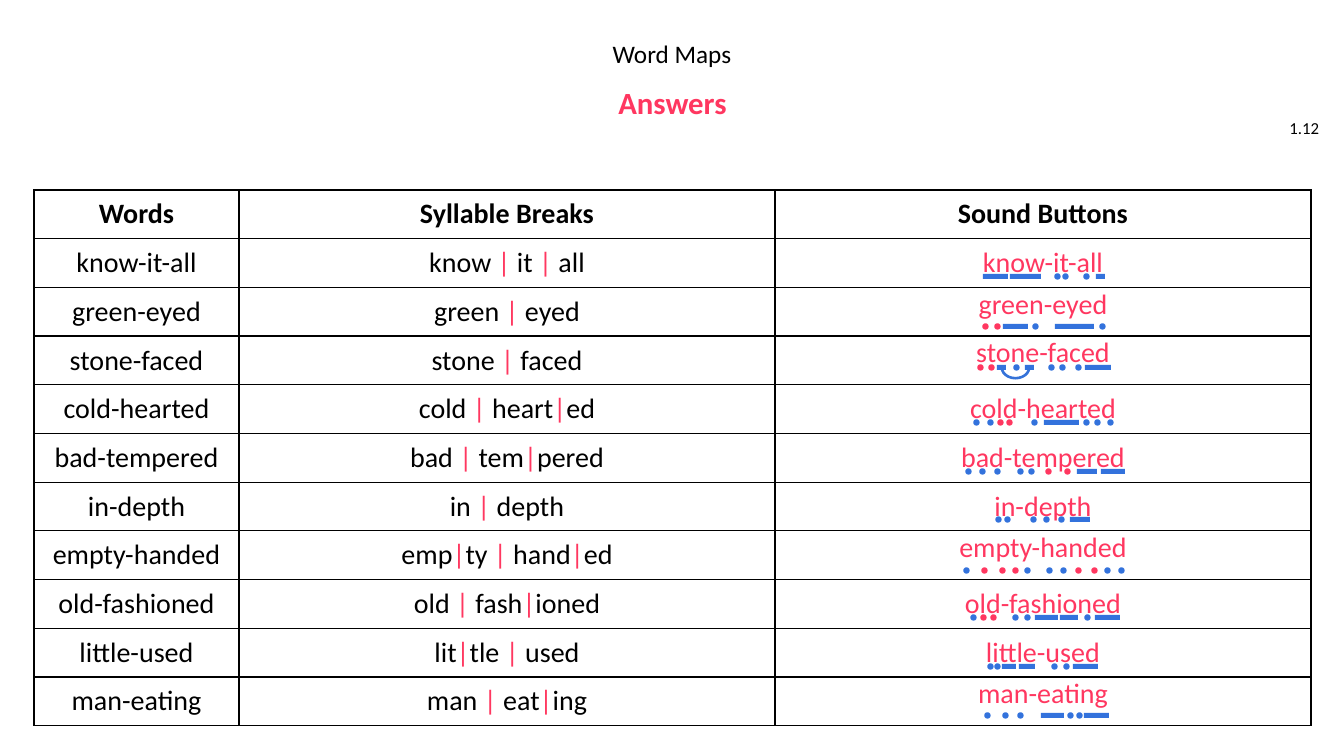
from dataclasses import dataclass

from lxml.etree import SubElement
from pptx import Presentation
from pptx.dml.color import RGBColor
from pptx.enum.shapes import MSO_SHAPE as Shape
from pptx.enum.text import MSO_ANCHOR as Anchor, PP_ALIGN as Align
from pptx.oxml.ns import qn
from pptx.util import Pt

PX = 914400 / 100.8


@dataclass(frozen=True)
class Theme:
    font: str = "Calibri"
    ink: str = "000000"
    accent: str = "FF3760"
    button: str = "3372DC"
    arc: str = "4472C4"
    note: int = 12
    heading: int = 18
    cell: int = 20
    answer: int = 22


@dataclass(frozen=True)
class Word:
    """Marks are left edges in px; bars are (left, width) pairs."""
    text: str
    syllables: str
    anchor: Anchor
    mark_y: int
    blue: tuple = ()
    red: tuple = ()
    bars: tuple = ()


MID, TOP = Anchor.MIDDLE, Anchor.TOP
HEADERS = ("Words", "Syllable Breaks", "Sound Buttons")
WORDS = (
    Word("know-it-all", "know | it | all", MID, 274,
         (1055, 1063, 1084), (), ((983, 25), (1010, 31), (1096, 9))),
    Word("green-eyed", "green | eyed", TOP, 324,
         (1033, 1100), (983, 995), ((1003, 25), (1055, 39))),
    Word("stone-faced", "stone | faced", TOP, 365,
         (1014, 1049, 1060, 1076), (978, 989), ((997, 9), (1025, 9), (1085, 26))),
    Word("cold-hearted", "cold | heart|ed", MID, 420,
         (974, 988, 1032, 1084, 1095, 1108), (998, 1007), ((1044, 35),)),
    Word("bad-tempered", "bad | tem|pered", MID, 469,
         (966, 980, 995, 1018, 1029), (1046, 1065), ((1077, 20), (1101, 24))),
    Word("in-depth", "in | depth", MID, 517,
         (996, 1005, 1031, 1044, 1059), (), ((1070, 20),)),
    Word("empty-handed", "emp|ty | hand|ed", TOP, 568,
         (964, 1025, 1047, 1061, 1105, 1119), (982, 1000, 1013, 1076, 1092)),
    Word("old-fashioned", "old | fash|ioned", MID, 615,
         (971, 1013, 1025, 1085), (981, 991), ((1035, 23), (1060, 18), (1095, 25))),
    Word("little-used", "lit|tle | used", MID, 664,
         (988, 995, 1052, 1064), (), ((1002, 14), (1019, 16), (1073, 25))),
    Word("man-eating", "man | eat|ing", TOP, 713,
         (985, 1003, 1018, 1068, 1077), (), ((1041, 23), (1084, 25))),
)


def emu(px):
    return round(px * PX)


def rgb(color):
    return RGBColor.from_string(color)


class WordMapSlide:
    MARK = 5

    def __init__(self, prs, theme):
        self.theme = theme
        self.s = prs.slides.add_slide(prs.slide_layouts[6])

    def style(self, p, size, color, bold=False, align=Align.CENTER):
        p.alignment = align
        f = p.font
        f.name, f.size, f.bold = self.theme.font, Pt(size), bold
        f.color.rgb = rgb(color)

    def text(self, text, box, size, color, bold=False, align=Align.CENTER,
             anchor=MID, spacing=1.0):
        tf = self.s.shapes.add_textbox(*map(emu, box)).text_frame
        tf.word_wrap, tf.vertical_anchor = True, anchor
        p = tf.paragraphs[0]
        p.text, p.line_spacing = text, spacing
        self.style(p, size, color, bold, align)

    def shape(self, kind, box, fill, line=None, width=1):
        sp = self.s.shapes.add_shape(kind, *map(emu, box))
        sp.shadow.inherit = False
        sp.fill.solid()
        sp.fill.fore_color.rgb = rgb(fill)
        if line:
            sp.line.color.rgb = rgb(line)
            sp.line.width = Pt(width)
        else:
            sp.line.fill.background()
        return sp

    def border(self, cell):
        tc_pr = cell._tc.get_or_add_tcPr()
        for side in ("a:lnL", "a:lnR", "a:lnT", "a:lnB"):
            ln = SubElement(tc_pr, qn(side), w=str(Pt(1)))
            fill = SubElement(ln, qn("a:solidFill"))
            SubElement(fill, qn("a:srgbClr"), val=self.theme.ink)

    def cell(self, cell, text, color, bold=False, anchor=MID, inset=5):
        """Fill one cell, with each syllable bar in the accent colour."""
        self.border(cell)
        cell.fill.background()
        cell.vertical_anchor = anchor
        cell.margin_left = cell.margin_right = emu(10)
        cell.margin_top = cell.margin_bottom = emu(inset)
        p = cell.text_frame.paragraphs[0]
        self.style(p, self.theme.cell, color, bold)
        for i, part in enumerate(text.split("|")):
            if i:
                r = p.add_run()
                r.text = "|"
                r.font.color.rgb = rgb(self.theme.accent)
            p.add_run().text = part

    def table(self, left, top, widths, height):
        t = self.theme
        rows = len(WORDS) + 1
        table = self.s.shapes.add_table(
            rows, len(widths), emu(left), emu(top), emu(sum(widths)), emu(height)).table
        table.first_row = table.horz_banding = False
        for column, width in zip(table.columns, widths):
            column.width = emu(width)
        for row in table.rows:
            row.height = emu(height / rows)
        for col, header in enumerate(HEADERS):
            self.cell(table.cell(0, col), header, t.ink, bold=True)
        for row, word in enumerate(WORDS, 1):
            self.cell(table.cell(row, 0), word.text, t.ink)
            self.cell(table.cell(row, 1), word.syllables, t.ink)
            self.cell(table.cell(row, 2), word.text, t.accent,
                      anchor=word.anchor, inset=0)

    def sound_buttons(self, word):
        t, size = self.theme, self.MARK
        for left, width in word.bars:
            self.shape(Shape.RECTANGLE, (left, word.mark_y, width, size), t.button)
        for color, lefts in ((t.button, word.blue), (t.accent, word.red)):
            for left in lefts:
                self.shape(Shape.OVAL, (left, word.mark_y, size, size), color, color)

    def split_vowel_arc(self, box):
        sp = self.shape(Shape.BLOCK_ARC, box, self.theme.arc, self.theme.button, 0.75)
        sp.rotation = 180
        for i, value in enumerate((108, 215.34, 0.07)):
            sp.adjustments[i] = value


def main():
    prs = Presentation()
    prs.slide_width, prs.slide_height = emu(1344), emu(756)
    t = Theme()
    page = WordMapSlide(prs, t)
    page.text("1.12", (1265, 108, 64, 40), t.note, t.ink, align=Align.RIGHT)
    page.text("Answers", (211, 85, 923, 40), t.answer, t.accent, bold=True, spacing=0.9)
    page.text("Word Maps", (385, 37, 574, 35), t.heading, t.ink, anchor=TOP, spacing=0.9)
    page.table(34, 190, (205, 536, 536), 536)
    for word in WORDS:
        page.sound_buttons(word)
    page.split_vowel_arc((1001, 356, 29, 23))
    prs.save("out.pptx")


if __name__ == "__main__":
    main()
